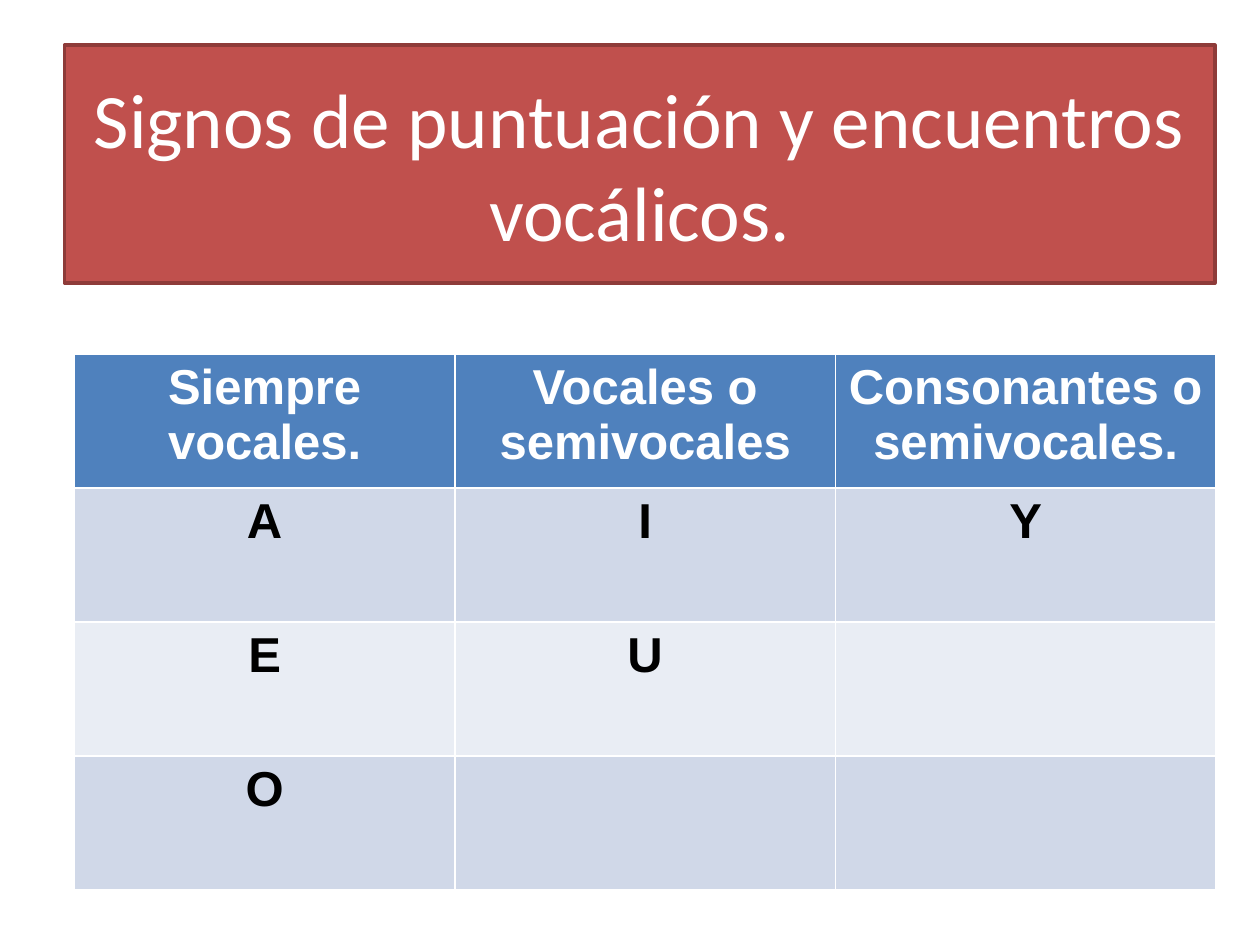
from pptx import Presentation
from pptx.dml.color import RGBColor
from pptx.enum.shapes import MSO_SHAPE
from pptx.enum.text import MSO_ANCHOR, PP_ALIGN
from pptx.util import Cm, Pt

RECTANGLE = MSO_SHAPE.RECTANGLE
MIDDLE = MSO_ANCHOR.MIDDLE
CENTER = PP_ALIGN.CENTER

COLORS = {
    "title": "C0504D",
    "title_line": "8E3B39",
    "header": "4F81BD",
    "odd_row": "D0D8E8",
    "even_row": "E9EDF4",
    "white": "FFFFFF",
    "black": "000000",
}
TITLE_FONT = {"name": "Calibri", "size": Pt(44), "bold": False}
TABLE_FONT = {"name": "Arial", "size": Pt(28), "bold": True}

TITLE = "Signos de puntuación y encuentros vocálicos."
ROWS = [
    ["Siempre vocales.", "Vocales o semivocales", "Consonantes o semivocales."],
    ["A", "I", "Y"],
    ["E", "U", ""],
    ["O", "", ""],
]


def color(name):
    return RGBColor.from_string(COLORS[name])


def paint(fill, name):
    fill.solid()
    fill.fore_color.rgb = color(name)


def write(frame, text, font, color_name):
    para = frame.paragraphs[0]
    para.alignment = CENTER
    span = para.add_run()
    span.text = text
    for key, value in font.items():
        setattr(span.font, key, value)
    span.font.color.rgb = color(color_name)


def add_title(page, left, top, width, height):
    box = page.shapes.add_shape(RECTANGLE, left, top, width, height)
    box.shadow.inherit = False
    paint(box.fill, "title")
    box.line.color.rgb = color("title_line")
    box.line.width = Pt(2)
    box.text_frame.word_wrap = True
    box.text_frame.vertical_anchor = MIDDLE
    write(box.text_frame, TITLE, TITLE_FONT, "white")


def add_vowel_table(page, left, top, width, height):
    # The default table style supplies the white cell borders
    table = page.shapes.add_table(
        len(ROWS), len(ROWS[0]), left, top, width, height).table
    for row, texts in enumerate(ROWS):
        if row == 0:
            fill_name, text_name = "header", "white"
        else:
            fill_name = "odd_row" if row % 2 else "even_row"
            text_name = "black"
        for column, text in enumerate(texts):
            cell = table.cell(row, column)
            paint(cell.fill, fill_name)
            if text:
                write(cell.text_frame, text, TABLE_FONT, text_name)


def main():
    deck = Presentation()
    deck.slide_width, deck.slide_height = Cm(25.4), Cm(19.05)
    page = deck.slides.add_slide(deck.slide_layouts[6])

    # Title banner above, vowel classes below
    add_title(page, Cm(1.3), Cm(0.91), Cm(23.19), Cm(4.8))
    add_vowel_table(page, Cm(1.5), Cm(7.14), Cm(23.01), Cm(10.8))

    deck.save("out.pptx")


if __name__ == "__main__":
    main()
